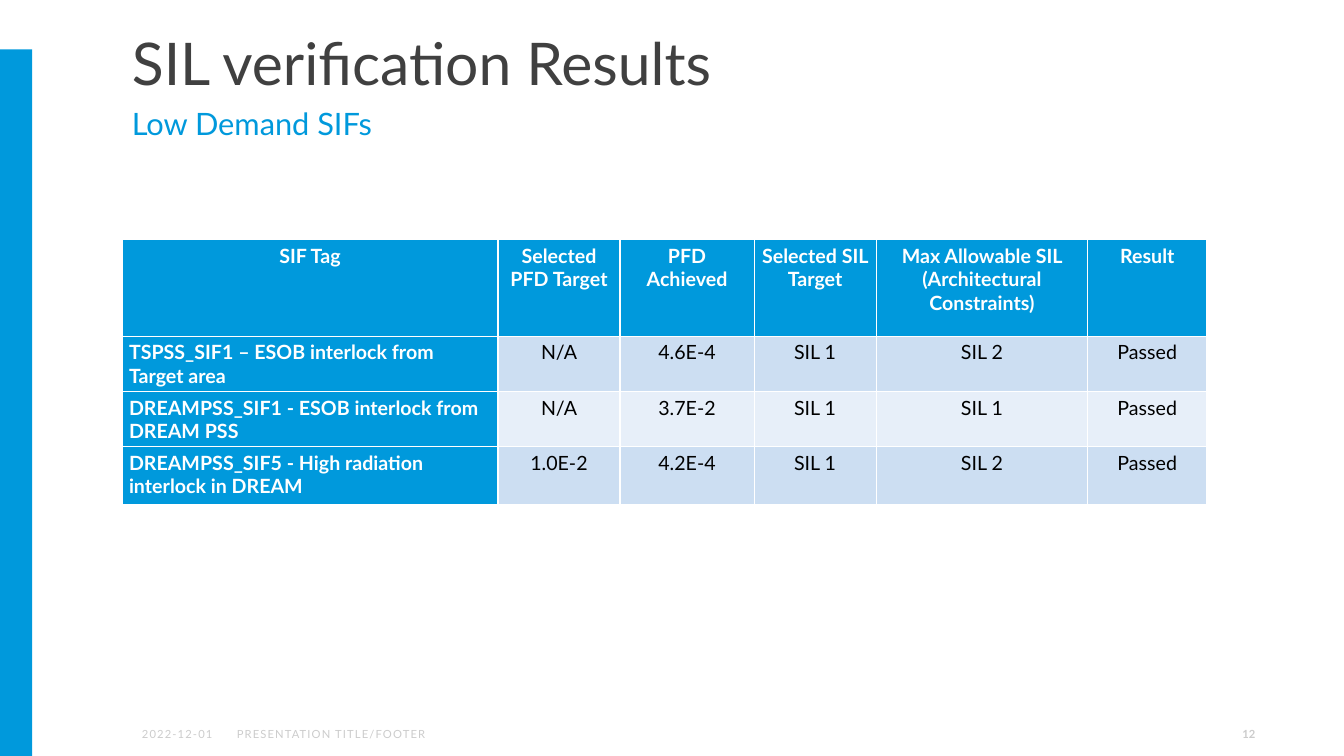
from pptx import Presentation
from pptx.util import Inches, Pt
from pptx.dml.color import RGBColor
from pptx.enum import shapes, text

FONT = "Lato"
BLUE, GREY, PALE = "0099DC", "404040", "CCCCCC"
WHITE, BLACK = "FFFFFF", "000000"
BANDS = ["CCDEF2", "E7EFF9"]
LEFT, MID, RIGHT = text.PP_ALIGN.LEFT, text.PP_ALIGN.CENTER, text.PP_ALIGN.RIGHT
TOP, CENTRE = text.MSO_ANCHOR.TOP, text.MSO_ANCHOR.MIDDLE

# Content: box, insets, anchor, words, size, colour, bold, alignment, line spacing, tracking
SIDE = (0.1, 0.05, 0.1, 0.05)
TEXTS = [
    ((1.21, 0.29, 10.24, 0.72), (0.1, 0.05, 0.1, 0.02), TOP,
     "SIL verification Results", 42, GREY, False, LEFT, 0.9, 0),
    ((1.21, 1.02, 10.24, 0.55), (0.1, 0.02, 0.1, 0.05), TOP,
     "Low Demand SIFs", 22, BLUE, False, LEFT, 1.0, 0),
    ((1.31, 7.08, 0.91, 0.4), SIDE, CENTRE,
     "2022-12-01", 8, PALE, False, LEFT, 1.0, 0.8),
    ((2.25, 7.08, 4.72, 0.4), SIDE, CENTRE,
     "PRESENTATION TITLE/FOOTER", 8, PALE, False, LEFT, 1.0, 0.8),
    ((9.55, 7.08, 3, 0.4), SIDE, CENTRE,
     "12", 8, PALE, True, RIGHT, 1.0, 0),
]
ROWS = [
    ["SIF Tag", "Selected PFD Target", "PFD Achieved", "Selected SIL Target",
     "Max Allowable SIL (Architectural Constraints)", "Result"],
    ["TSPSS_SIF1 – ESOB interlock from Target area",
     "N/A", "4.6E-4", "SIL 1", "SIL 2", "Passed"],
    ["DREAMPSS_SIF1 - ESOB interlock from DREAM PSS",
     "N/A", "3.7E-2", "SIL 1", "SIL 1", "Passed"],
    ["DREAMPSS_SIF5 - High radiation interlock in DREAM",
     "1.0E-2", "4.2E-4", "SIL 1", "SIL 2", "Passed"],
]
WIDTHS = [3.73, 1.21, 1.33, 1.21, 2.1, 1.18]
HEIGHTS = [0.96, 0.53, 0.53, 0.57]


def color(code):
    return RGBColor.from_string(code)


def paint(item, code):
    item.fill.solid()
    item.fill.fore_color.rgb = color(code)


def inset(item, sides):
    (item.margin_left, item.margin_top,
     item.margin_right, item.margin_bottom) = map(Inches, sides)


def style(para, words, size, code, bold, align):
    para.text = words
    para.alignment = align
    font = para.font
    font.name, font.size, font.bold = FONT, Pt(size), bold
    font.color.rgb = color(code)


deck = Presentation()
deck.slide_width, deck.slide_height = Inches(13.33), Inches(7.5)
slide = deck.slides.add_slide(deck.slide_layouts[6])

# Side bar
bar = slide.shapes.add_shape(shapes.MSO_SHAPE.RECTANGLE,
                             *map(Inches, (0, 0.49, 0.32, 7.01)))
bar.shadow.inherit = False
paint(bar, BLUE)
bar.line.fill.background()

# Title, subtitle and footer
for box, sides, anchor, words, size, code, bold, align, lead, track in TEXTS:
    frame = slide.shapes.add_textbox(*map(Inches, box)).text_frame
    frame.word_wrap = True
    frame.vertical_anchor = anchor
    inset(frame, sides)
    para = frame.paragraphs[0]
    style(para, words, size, code, bold, align)
    para.line_spacing = lead
    if track:
        para.runs[0]._r.get_or_add_rPr().set("spc", str(round(track * 100)))

# Results table: the default style draws the white rules
table = slide.shapes.add_table(
    len(ROWS), len(WIDTHS), Inches(1.21), Inches(2.38),
    Inches(sum(WIDTHS)), Inches(sum(HEIGHTS))).table
table.first_col = True
for col, width in zip(table.columns, WIDTHS):
    col.width = Inches(width)
for r, (row, height) in enumerate(zip(ROWS, HEIGHTS)):
    table.rows[r].height = Inches(height)
    for c, words in enumerate(row):
        cell = table.cell(r, c)
        head = r == 0 or c == 0
        paint(cell, BLUE if head else BANDS[(r - 1) % 2])
        inset(cell, (0.07, 0.04, 0.07, 0.04))
        para = cell.text_frame.paragraphs[0]
        style(para, words, 14, WHITE if head else BLACK, head,
              LEFT if r and c == 0 else MID)
        para.space_after = Pt(6)

deck.save("out.pptx")
